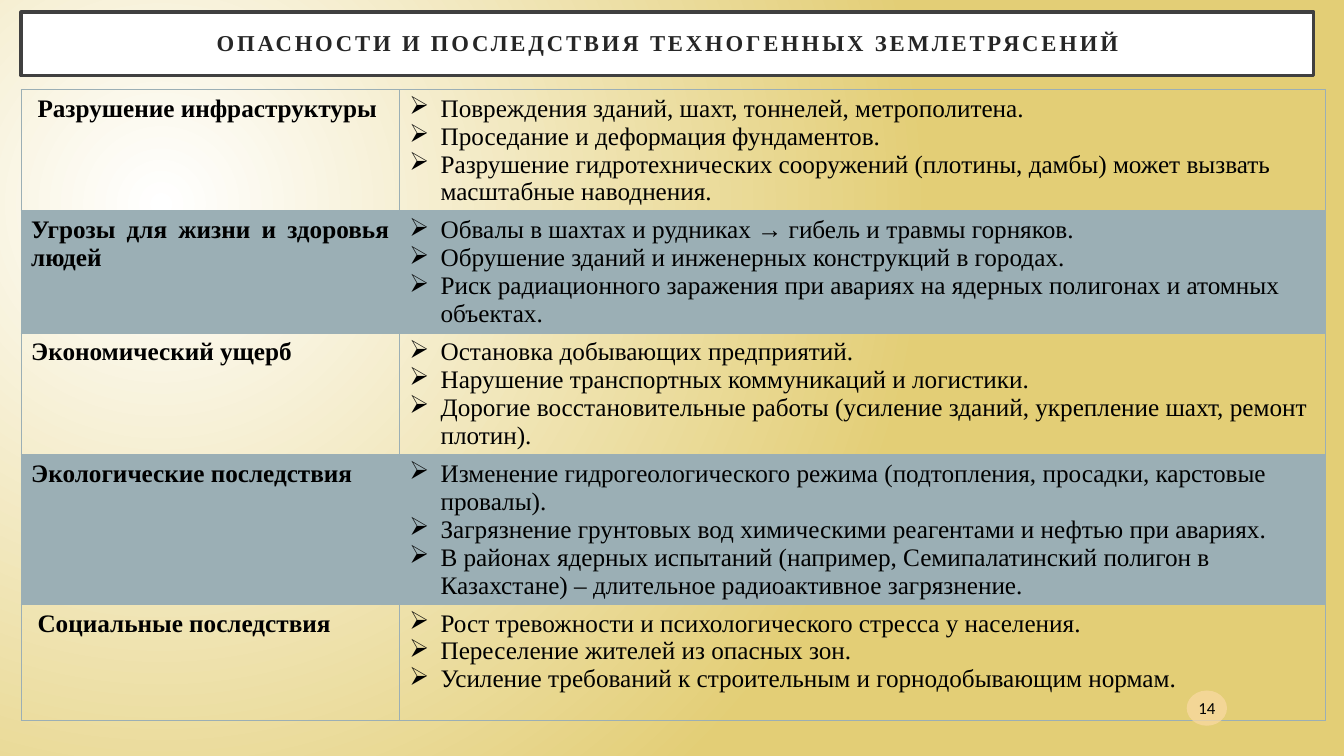
from dataclasses import dataclass

from lxml import etree
from pptx import Presentation
from pptx import util as u
from pptx.dml.color import RGBColor
from pptx.enum import shapes, text
from pptx.oxml.ns import qn


@dataclass(frozen=True)
class Theme:
    serif: str = "Times New Roman"
    sans: str = "Calibri"
    title_size: float = 16.2
    body_size: float = 18
    number_size: float = 12
    white: str = "FFFFFF"
    gold: str = "E3CE76"
    frame: str = "404040"
    title: str = "262626"
    ink: str = "000000"
    steel: str = "9BAFB5"
    badge: str = "FBDAA5"


T = Theme()
CENTER, JUSTIFY = text.PP_ALIGN.CENTER, text.PP_ALIGN.JUSTIFY
TITLE = "ОПАСНОСТИ И ПОСЛЕДСТВИЯ ТЕХНОГЕННЫХ ЗЕМЛЕТРЯСЕНИЙ"
HAZARDS = [
    (" Разрушение инфраструктуры", [
        "Повреждения зданий, шахт, тоннелей, метрополитена.",
        "Проседание и деформация фундаментов.",
        "Разрушение гидротехнических сооружений (плотины, дамбы) может вызвать масштабные наводнения."]),
    ("Угрозы для жизни и здоровья людей", [
        "Обвалы в шахтах и рудниках → гибель и травмы горняков.",
        "Обрушение зданий и инженерных конструкций в городах.",
        "Риск радиационного заражения при авариях на ядерных полигонах и атомных объектах."]),
    ("Экономический ущерб", [
        "Остановка добывающих предприятий.",
        "Нарушение транспортных коммуникаций и логистики.",
        "Дорогие восстановительные работы (усиление зданий, укрепление шахт, ремонт плотин)."]),
    ("Экологические последствия", [
        "Изменение гидрогеологического режима (подтопления, просадки, карстовые провалы).",
        "Загрязнение грунтовых вод химическими реагентами и нефтью при авариях.",
        "В районах ядерных испытаний (например, Семипалатинский полигон в Казахстане) – "
        "длительное радиоактивное загрязнение."]),
    (" Социальные последствия", [
        "Рост тревожности и психологического стресса у населения.",
        "Переселение жителей из опасных зон.",
        "Усиление требований к строительным и горнодобывающим нормам."]),
]


def write(tf, lines, size=T.body_size, font=T.serif, color=T.ink, bold=False,
          align=None, line_spacing=None, tracking=None, bullet=None, indent=0.31):
    """Fill a text frame with one paragraph per line; tracking is in points."""
    for i, line in enumerate(lines):
        p = tf.paragraphs[0] if i == 0 else tf.add_paragraph()
        p.alignment, p.line_spacing = align, line_spacing
        r = p.add_run()
        r.text = line
        r.font.size, r.font.name, r.font.bold = u.Pt(size), font, bold
        r.font.color.rgb = RGBColor.from_string(color)
        if tracking:
            r.font._element.set("spc", str(tracking * 100))
        if bullet:
            props = p._p.get_or_add_pPr()
            props.set("marL", str(u.Inches(indent)))
            props.set("indent", str(-u.Inches(indent)))
            etree.SubElement(props, qn("a:buChar"), char=bullet)


def paint(fill, color, opacity=100):
    fill.solid()
    fill.fore_color.rgb = RGBColor.from_string(color)
    if opacity < 100:
        srgb = fill._xPr.find(".//" + qn("a:srgbClr"))
        etree.SubElement(srgb, qn("a:alpha"), val=str(opacity * 1000))


def add_panel(s, kind, box, color, opacity=100, margins=(0.2, 0.2)):
    sp = s.shapes.add_shape(kind, *map(u.Inches, box))
    sp.shadow.inherit = False
    paint(sp.fill, color, opacity)
    sp.line.fill.background()
    tf = sp.text_frame
    tf.word_wrap = True
    tf.vertical_anchor = text.MSO_ANCHOR.MIDDLE
    tf.margin_left = tf.margin_right = u.Inches(margins[0])
    tf.margin_top = tf.margin_bottom = u.Inches(margins[1])
    return sp


def add_background(s):
    """Radial glow centred in the upper left of the slide."""
    fill = s.background.fill
    fill.gradient()
    for stop, color, position in zip(fill.gradient_stops, (T.white, T.gold), (0, 1)):
        stop.color.rgb = RGBColor.from_string(color)
        stop.position = position
    grad = s.element.find(".//" + qn("a:gradFill"))
    grad.remove(grad.find(qn("a:lin")))
    glow = etree.SubElement(grad, qn("a:path"), {"path": "circle"})
    etree.SubElement(glow, qn("a:fillToRect"), l="50000", t="55000", r="125000", b="100000")


def add_title(s, box):
    sp = add_panel(s, shapes.MSO_SHAPE.RECTANGLE, box, T.white)
    paint(sp.line.fill, T.frame)
    sp.line.width = u.Pt(2.5)
    write(sp.text_frame, [TITLE], size=T.title_size, color=T.title, bold=True,
          align=CENTER, line_spacing=0.9, tracking=2)


def add_borders(cell, bottom=1):
    props = cell._tc.get_or_add_tcPr()
    for side, width in (("L", 1), ("R", 1), ("T", 1), ("B", bottom)):
        line = etree.SubElement(props, qn("a:ln" + side), w=str(u.Pt(width)))
        solid = etree.SubElement(line, qn("a:solidFill"))
        etree.SubElement(solid, qn("a:srgbClr"), val=T.steel)


def add_hazard_table(s, box, first_width=3.75):
    table = s.shapes.add_table(len(HAZARDS), 2, *map(u.Inches, box)).table
    table.first_row = table.horz_banding = False
    for column, width in zip(table.columns, (first_width, box[2] - first_width)):
        column.width = u.Inches(width)
    for i, (hazard, effects) in enumerate(HAZARDS):
        name, details = table.cell(i, 0), table.cell(i, 1)
        for cell in (name, details):
            add_borders(cell, bottom=2 if i == 0 else 1)
            if i % 2:
                paint(cell.fill, T.steel, 20)
            else:
                cell.fill.background()
        write(name.text_frame, [hazard], bold=True, align=JUSTIFY)
        write(details.text_frame, effects, bullet="➢")


def add_slide_number(s, box, number):
    sp = add_panel(s, shapes.MSO_SHAPE.OVAL, box, T.badge, opacity=70, margins=(0.02, 0.05))
    write(sp.text_frame, [number], size=T.number_size, font=T.sans, align=CENTER)


def main():
    prs = Presentation()
    prs.slide_width, prs.slide_height = u.Inches(13.33), u.Inches(7.5)
    s = prs.slides.add_slide(prs.slide_layouts[6])
    add_background(s)
    add_title(s, (0.21, 0.12, 12.82, 0.63))
    add_hazard_table(s, (0.21, 0.89, 12.94, 5.75))
    add_slide_number(s, (11.77, 6.85, 0.4, 0.35), "14")
    prs.save("out.pptx")


if __name__ == "__main__":
    main()
